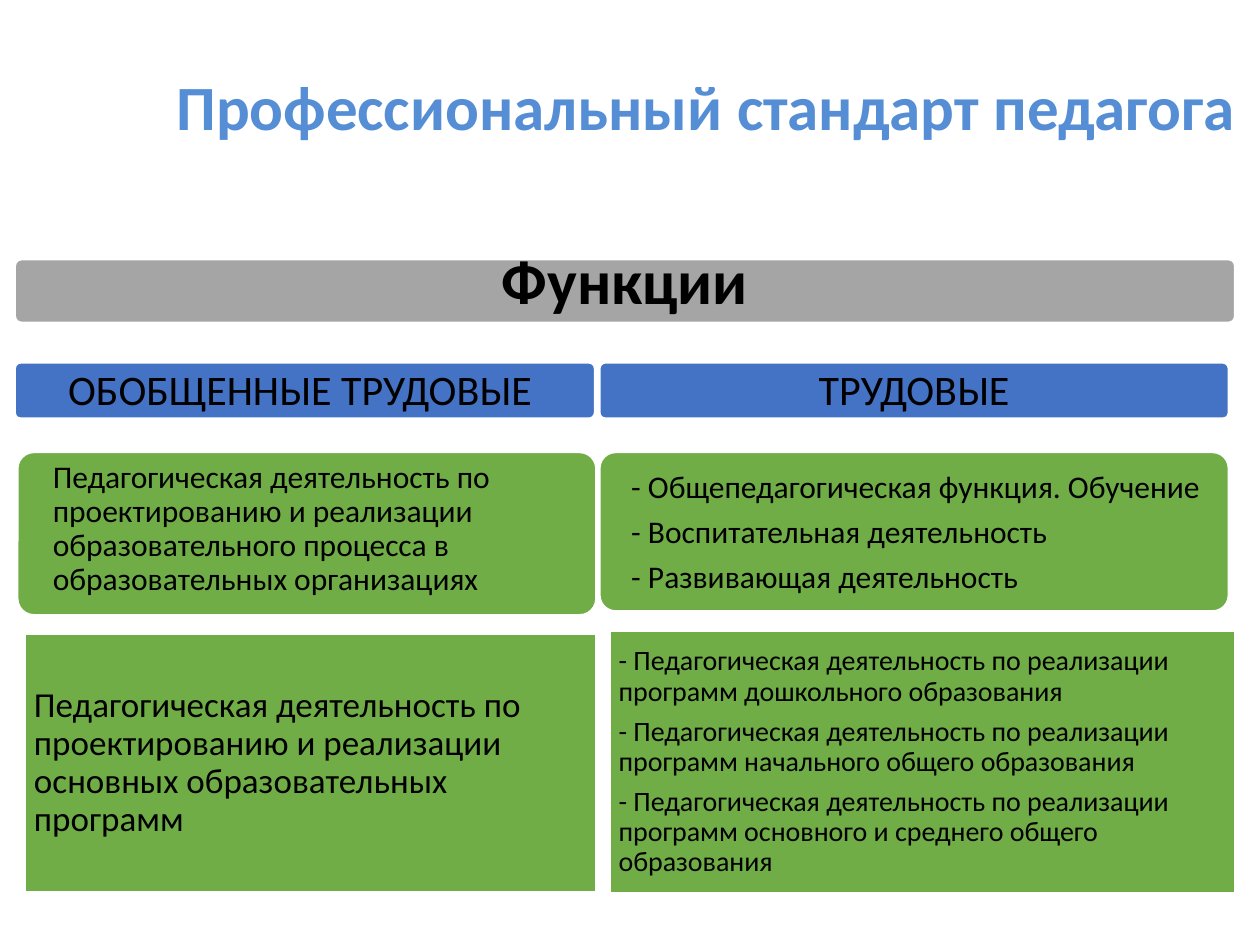
import pptx
import pptx.dml.color
import pptx.enum.shapes
import pptx.enum.text
import pptx.util

COLUMNS, ROWS = 100, 75
FONT = "Calibri"
GREY, BLUE, GREEN = "A5A5A5", "4472C4", "70AD47"
LEFT = pptx.enum.text.PP_ALIGN.LEFT
CENTER = pptx.enum.text.PP_ALIGN.CENTER
SHAPES = pptx.enum.shapes.MSO_SHAPE

deck = pptx.Presentation()
deck.slide_width = pptx.util.Inches(10)
deck.slide_height = pptx.util.Inches(7.5)


def colour(value):
    return pptx.dml.color.RGBColor.from_string(value)


def place(box):
    left, top, width, height = box
    column, row = deck.slide_width / COLUMNS, deck.slide_height / ROWS
    return [round(left * column), round(top * row),
            round(width * column), round(height * row)]


def write(frame, lines, size, align=LEFT, inset=0.05, ink="000000", bold=False):
    frame.word_wrap = True
    frame.auto_size = pptx.enum.text.MSO_AUTO_SIZE.NONE
    frame.vertical_anchor = pptx.enum.text.MSO_ANCHOR.MIDDLE
    frame.margin_left = frame.margin_right = pptx.util.Inches(inset)
    frame.margin_top = frame.margin_bottom = pptx.util.Inches(inset)
    for index, line in enumerate(lines):
        para = frame.paragraphs[0] if index == 0 else frame.add_paragraph()
        para.alignment = align
        para.line_spacing = 0.9
        para.space_after = pptx.util.Pt(size * 0.35)
        span = para.add_run()
        span.text = line
        span.font.name = FONT
        span.font.size = pptx.util.Pt(size)
        span.font.bold = bold
        span.font.color.rgb = colour(ink)


def add_title(page, box, text):
    title = page.shapes.title
    title.left, title.top, title.width, title.height = place(box)
    write(title.text_frame, [text], 36, inset=0.1, ink="558ED5", bold=True)
    title.text_frame.paragraphs[0].line_spacing = 1.0
    title.text_frame.paragraphs[0].space_after = pptx.util.Pt(0)


def add_panel(shapes, kind, box, fill):
    panel = shapes.add_shape(kind, *place(box))
    panel.shadow.inherit = False
    panel.fill.solid()
    panel.fill.fore_color.rgb = colour(fill)
    panel.line.color.rgb = colour("FFFFFF")
    panel.line.width = pptx.util.Pt(1)
    return panel


def add_block(page, box, fill, lines, size):
    panel = add_panel(page.shapes, SHAPES.RECTANGLE, box, fill)
    write(panel.text_frame, lines, size, inset=0.07)


def add_card(page, box, label_box, fill, lines, size, **style):
    group = page.shapes.add_group_shape()
    panel = add_panel(group.shapes, SHAPES.ROUNDED_RECTANGLE, box, fill)
    panel.adjustments[0] = 0.1
    label = group.shapes.add_textbox(*place(label_box))
    write(label.text_frame, lines, size, **style)


def build_functions_page():
    page = deck.slides.add_slide(deck.slide_layouts[5])
    add_title(page, (13, 2.1, 89, 12.5), "Профессиональный стандарт педагога")
    add_card(page, (1.2, 20.6, 96.8, 5), (1.3, 20.2, 96.6, 4.7), GREY,
             ["Функции"], 36, align=CENTER, bold=True)
    for left, width, heading in ((1.2, 46, "ОБОБЩЕННЫЕ ТРУДОВЫЕ "),
                                 (47.6, 49.9, "ТРУДОВЫЕ")):
        add_card(page, (left, 28.8, width, 4.4), (left, 29, width, 4.2), BLUE,
                 [heading], 24, align=CENTER, inset=0.03)

    activity = "Педагогическая деятельность по "
    design = activity + "проектированию и реализации "
    add_card(page, (1.4, 35.9, 45.9, 12.9), (3.6, 35.9, 45.6, 12.2), GREEN,
             [design + "образовательного процесса в образовательных организациях"],
             18, inset=0.06)
    add_card(page, (47.6, 35.9, 49.9, 12.6), (49.6, 36.1, 49.5, 12.4), GREEN,
             ["- Общепедагогическая функция. Обучение",
              "- Воспитательная деятельность",
              "- Развивающая деятельность"], 18)
    add_block(page, (2, 50.3, 45.3, 20.5), GREEN,
              [design + "основных образовательных программ"], 20)
    levels = ("дошкольного", "начального общего", "основного и среднего общего")
    add_block(page, (48.4, 50.1, 49.6, 20.8), GREEN,
              [f"- {activity}реализации программ {level} образования"
               for level in levels], 16)


if __name__ == "__main__":
    build_functions_page()
    deck.save("out.pptx")
